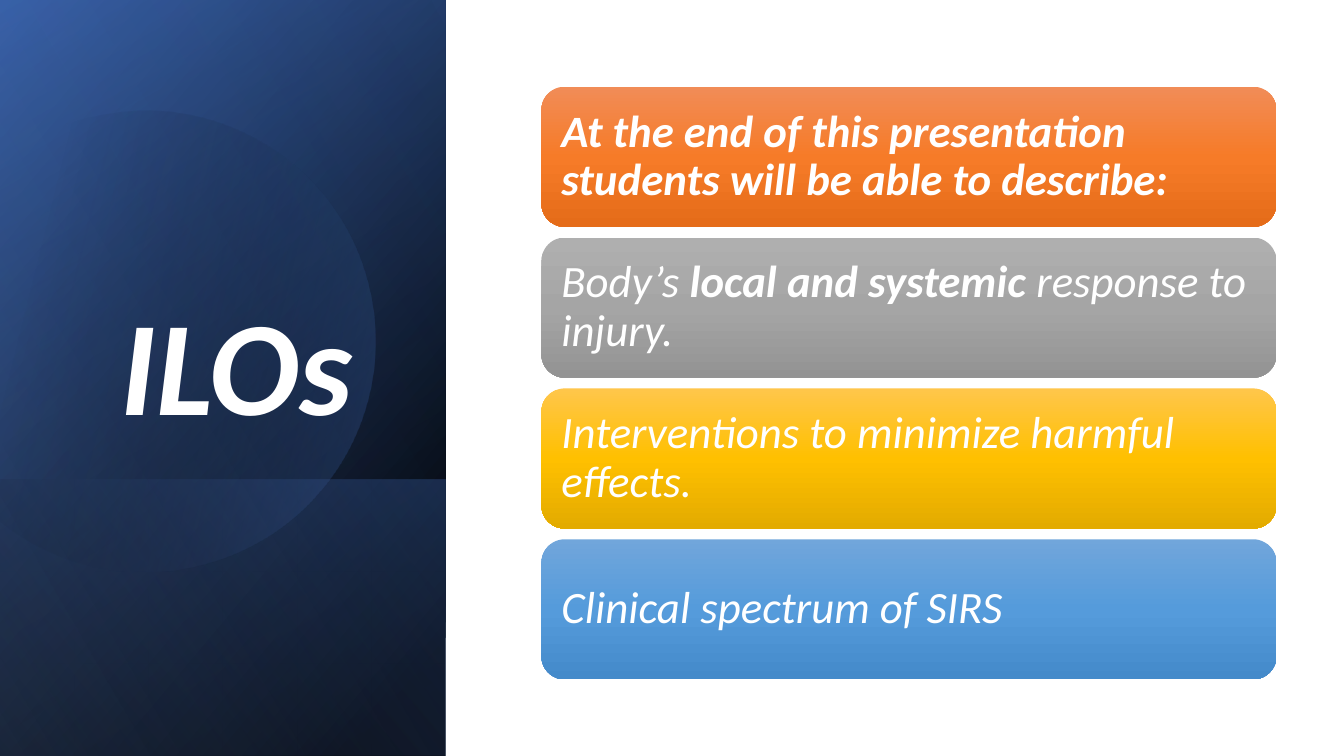
import math
from lxml import etree
from pptx import Presentation
from pptx.dml.color import RGBColor
from pptx.enum.shapes import MSO_SHAPE
from pptx.enum.text import MSO_ANCHOR, PP_ALIGN
from pptx.oxml.ns import qn
from pptx.util import Inches, Pt

RECTANGLE, ROUNDED = MSO_SHAPE.RECTANGLE, MSO_SHAPE.ROUNDED_RECTANGLE
MIDDLE, BOTTOM = MSO_ANCHOR.MIDDLE, MSO_ANCHOR.BOTTOM
CENTER, LEFT = PP_ALIGN.CENTER, PP_ALIGN.LEFT

THEME = {
    "font": "Calibri", "text": RGBColor(255, 255, 255),
    "title_size": Pt(96), "card_size": Pt(32),
    "black": "000000", "navy": "2F5597", "blue": "4472C4", "pale": "8FAADC",
    "orange_card": ("F18C57", "F67B28", "E56C19"),
    "gray_card": ("AFAFAF", "A5A5A5", "939393"),
    "gold_card": ("FFC64B", "FFC000", "E3AB00"),
    "blue_card": ("71A6DB", "559BDB", "448ACA"),
}
WIDTH, HEIGHT = 13.33, 7.5
PANEL_WIDTH = 4.42
BAND_HEIGHT = 2.74


def paint(shape, stops, angle):
    """Fill with a gradient of (position %, colour, opacity %) stops, angle clockwise."""
    shape.shadow.inherit = False
    shape.line.fill.background()
    shape.fill.gradient()
    gradient = shape.element.spPr.find(qn("a:gradFill"))
    stop_list = gradient.find(qn("a:gsLst"))
    for old_stop in list(stop_list):
        stop_list.remove(old_stop)
    for position, color, opacity in stops:
        stop = etree.SubElement(stop_list, qn("a:gs"), pos=str(position * 1000))
        tint = etree.SubElement(stop, qn("a:srgbClr"), val=color)
        if opacity < 100:
            etree.SubElement(tint, qn("a:alpha"), val=str(opacity * 1000))
    gradient.find(qn("a:lin")).set("ang", str(angle * 60000))


def write(frame, runs, size, align, anchor):
    """Put one italic paragraph of (text, bold) runs in the frame."""
    frame.word_wrap = True
    frame.vertical_anchor = anchor
    para = frame.paragraphs[0]
    para.alignment = align
    para.line_spacing = 0.9
    para.font.name, para.font.size = THEME["font"], size
    para.font.italic = True
    para.font.color.rgb = THEME["text"]
    for text, bold in runs:
        span = para.add_run()
        span.text = text
        span.font.bold = bold


deck = Presentation()
deck.slide_width, deck.slide_height = Inches(WIDTH), Inches(HEIGHT)
page = deck.slides.add_slide(deck.slide_layouts[6])
shapes = page.shapes

# Side panel: layered gradients, each a rectangle turned a quarter; None is the disc
black, blue = THEME["black"], THEME["blue"]
layers = [
    (HEIGHT, [(8, black, 100), (100, THEME["navy"], 100)], 50),
    (HEIGHT, [(0, black, 0), (99, blue, 46)], 30),
    (BAND_HEIGHT, [(2, blue, 29), (100, black, 30)], 130),
    (None, [(29, black, 0), (100, blue, 43)], 30),
    (HEIGHT, [(0, black, 0), (99, THEME["pale"], 11)], 120),
]
# The disc's outline as it lies on the slide; its frame is tilted about its centre
DISC_LEFT, DISC_TOP, DISC_WIDTH, DISC_HEIGHT = -0.55, 1.06, 4.27, 4.57
DISC_TILT = 343.9
DISC_OUTLINE = [
    ("moveTo", [(1.49, 1.1)]),
    ("cubicBezTo", [(2.46, 1.12), (3.35, 1.77), (3.63, 2.75)]),
    ("cubicBezTo", [(3.98, 3.97), (3.28, 5.23), (2.07, 5.58)]),
    ("cubicBezTo", [(1.31, 5.8), (0.53, 5.61), (-0.03, 5.14)]),
    ("lnTo", [(-0.15, 5.03)]),
    ("lnTo", [(-0.15, 1.75)]),
    ("lnTo", [(0, 1.61)]),
    ("cubicBezTo", [(0.23, 1.42), (0.5, 1.28), (0.8, 1.19)]),
    ("cubicBezTo", [(1.03, 1.13), (1.26, 1.1), (1.49, 1.1)]),
    ("close", []),
]
turn = math.radians(-DISC_TILT)

for height, stops, angle in layers:
    if height is None:
        left, top = Inches(DISC_LEFT), Inches(DISC_TOP)
        right, bottom = left + Inches(DISC_WIDTH), top + Inches(DISC_HEIGHT)
        builder = shapes.build_freeform(left, top)
        builder.add_line_segments([(right, top), (right, bottom), (left, bottom)])
        layer = builder.convert_to_shape()
        layer.rotation = DISC_TILT
        outline = next(layer.element.iter(qn("a:path")))
        for old_step in list(outline):
            outline.remove(old_step)
        for kind, points in DISC_OUTLINE:
            step = etree.SubElement(outline, qn("a:" + kind))
            for x, y in points:
                dx = x - DISC_LEFT - DISC_WIDTH / 2
                dy = y - DISC_TOP - DISC_HEIGHT / 2
                local_x = DISC_WIDTH / 2 + dx * math.cos(turn) - dy * math.sin(turn)
                local_y = DISC_HEIGHT / 2 + dx * math.sin(turn) + dy * math.cos(turn)
                etree.SubElement(step, qn("a:pt"),
                                 x=str(int(Inches(local_x))), y=str(int(Inches(local_y))))
    else:
        layer = shapes.add_shape(
            RECTANGLE, Inches((PANEL_WIDTH - height) / 2),
            Inches(HEIGHT - (height + PANEL_WIDTH) / 2),
            Inches(height), Inches(PANEL_WIDTH))
        layer.rotation = 90
        layer.element.spPr.find(qn("a:xfrm")).set("flipH", "1")
    paint(layer, stops, angle)

title = shapes.add_textbox(Inches(0.64), Inches(1.84), Inches(3.41), Inches(2.62))
write(title.text_frame, [("ILOs", True)], THEME["title_size"], CENTER, BOTTOM)

# Cards: one column, equal steps
cards = [
    ("orange_card", [("At the end of this presentation students will be able to describe:", True)]),
    ("gray_card", [("Body’s ", False), ("local and systemic ", True),
                   ("response to injury.", False)]),
    ("gold_card", [("Interventions to minimize harmful effects.", False)]),
    ("blue_card", [("Clinical spectrum of SIRS", False)]),
]
CARD_LEFT, CARD_WIDTH, CARD_HEIGHT = 5.37, 7.29, 1.39
FIRST_TOP, LAST_TOP = 0.86, 5.35
CARD_INSET = Inches(0.13)
card_step = (LAST_TOP - FIRST_TOP) / (len(cards) - 1)
for row, (palette, runs) in enumerate(cards):
    card = shapes.add_shape(ROUNDED, Inches(CARD_LEFT), Inches(FIRST_TOP + row * card_step),
                            Inches(CARD_WIDTH), Inches(CARD_HEIGHT))
    paint(card, [(position, color, 100)
                 for position, color in zip((0, 50, 100), THEME[palette])], 90)
    frame = card.text_frame
    frame.margin_left = frame.margin_right = CARD_INSET
    frame.margin_top = frame.margin_bottom = CARD_INSET
    write(frame, runs, THEME["card_size"], LEFT, MIDDLE)

deck.save("out.pptx")
